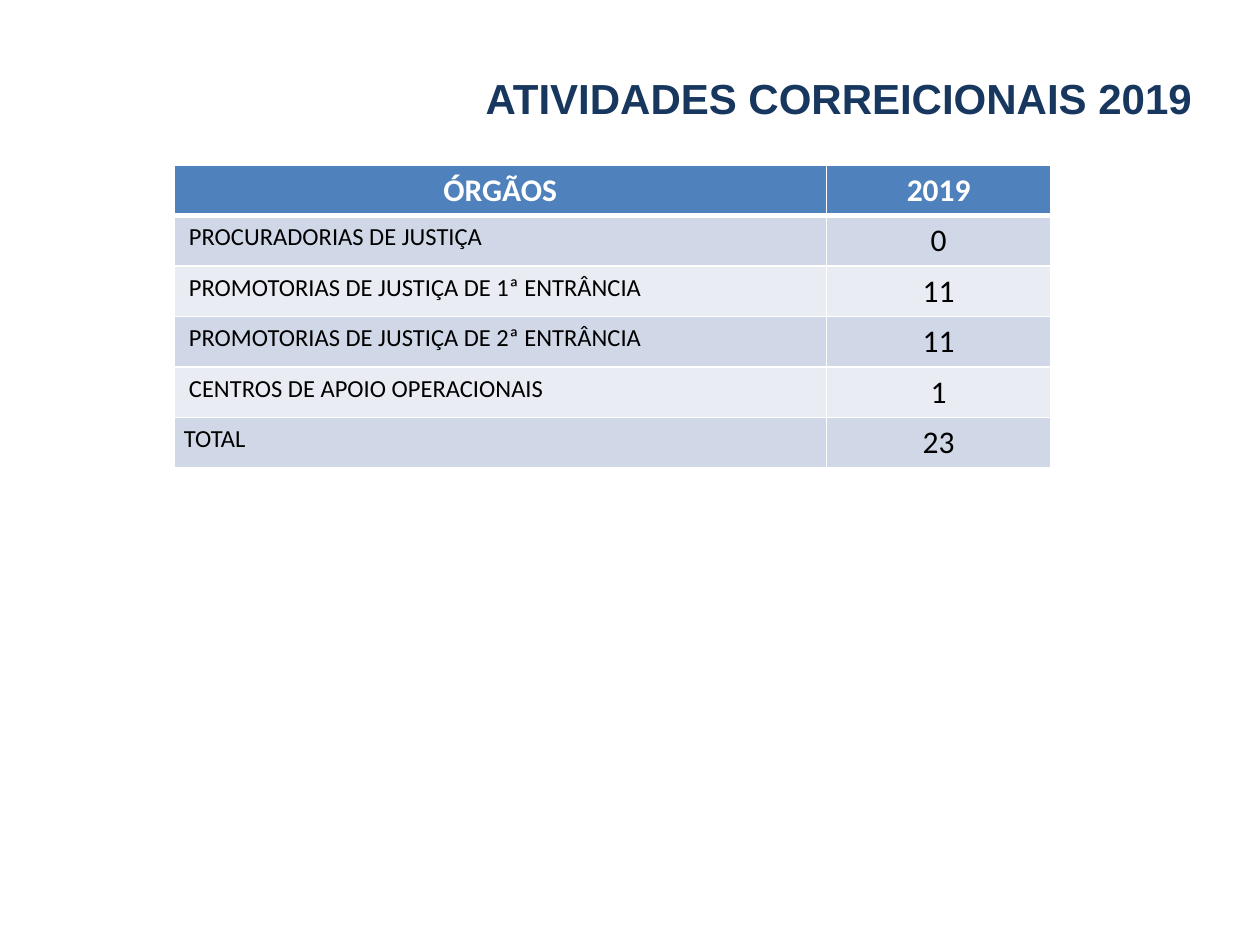
from lxml.etree import SubElement
from pptx import Presentation
from pptx.dml.color import RGBColor
from pptx.enum.text import MSO_ANCHOR, PP_ALIGN
from pptx.oxml.ns import qn
from pptx.util import Inches, Pt

TITLE = "ATIVIDADES CORREICIONAIS 2019"
HEADER = ("ÓRGÃOS", "2019")
ROWS = [
    ("PROCURADORIAS DE JUSTIÇA", "0"),
    ("PROMOTORIAS DE JUSTIÇA DE 1ª ENTRÂNCIA", "11"),
    ("PROMOTORIAS DE JUSTIÇA DE 2ª ENTRÂNCIA", "11"),
    ("CENTROS DE APOIO OPERACIONAIS", "1"),
    ("TOTAL", "23"),
]
COLORS = {
    "title": "17375E",
    "header": "4F81BD",
    "odd": "D0D8E7",
    "even": "E9ECF3",
    "white": "FFFFFF",
    "text": "000000",
}
COL_WIDTHS = (5.18, 1.78)
ROW_HEIGHT = 0.4
THIN, THICK = 0.96, 3


def rgb(name):
    return RGBColor.from_string(COLORS[name])


def style_text(p, size, color, align, font="Calibri", bold=False):
    p.alignment = align
    p.font.name = font
    p.font.size = Pt(size)
    p.font.bold = bold
    p.font.color.rgb = rgb(color)


def set_borders(cell, top, bottom):
    """Draw white borders; top and bottom are widths in points."""
    tc_pr = cell._tc.get_or_add_tcPr()
    for side, width in (("L", THIN), ("R", THIN), ("T", top), ("B", bottom)):
        ln = SubElement(tc_pr, qn(f"a:ln{side}"), w=str(Pt(width)))
        fill = SubElement(ln, qn("a:solidFill"))
        SubElement(fill, qn("a:srgbClr"), val=COLORS["white"])


def add_title(s):
    box = s.shapes.add_textbox(Inches(1.06), Inches(0.36), Inches(8.5), Inches(0.87))
    tf = box.text_frame
    tf.word_wrap = True
    tf.vertical_anchor = MSO_ANCHOR.MIDDLE
    p = tf.paragraphs[0]
    p.text = TITLE
    p.line_spacing = 0.93
    style_text(p, 24, "title", PP_ALIGN.RIGHT, "Arial", True)


def fill_cell(cell, text, row, col):
    is_header = row == 0
    is_label = col == 0 and not is_header
    set_borders(cell, THICK if row == 1 else THIN, THICK if is_header else THIN)
    cell.fill.solid()
    cell.fill.fore_color.rgb = rgb("header" if is_header else "odd" if row % 2 else "even")
    cell.margin_left = cell.margin_right = Inches(0.08 if is_label else 0.11)
    cell.margin_top = cell.margin_bottom = Inches(0.05)
    p = cell.text_frame.paragraphs[0]
    p.text = text
    if is_label:
        if row < len(ROWS):  # every label but the total is slightly indented
            cell.margin_left = Inches(0.12)
        p.line_spacing = 1.02
        style_text(p, 14, "text", PP_ALIGN.JUSTIFY)
    else:
        style_text(p, 18, "white" if is_header else "text", PP_ALIGN.CENTER, bold=is_header)


def add_activity_table(s):
    data = [HEADER] + ROWS
    table = s.shapes.add_table(
        len(data), len(COL_WIDTHS), Inches(1.38), Inches(1.31),
        Inches(sum(COL_WIDTHS)), Inches(ROW_HEIGHT * len(data)),
    ).table
    for column, width in zip(table.columns, COL_WIDTHS):
        column.width = Inches(width)
    for r, values in enumerate(data):
        table.rows[r].height = Inches(ROW_HEIGHT)
        for c, text in enumerate(values):
            fill_cell(table.cell(r, c), text, r, c)


def main():
    prs = Presentation()
    prs.slide_width, prs.slide_height = Inches(10), Inches(7.5)
    s = prs.slides.add_slide(prs.slide_layouts[6])
    add_title(s)
    add_activity_table(s)
    prs.save("out.pptx")


if __name__ == "__main__":
    main()
